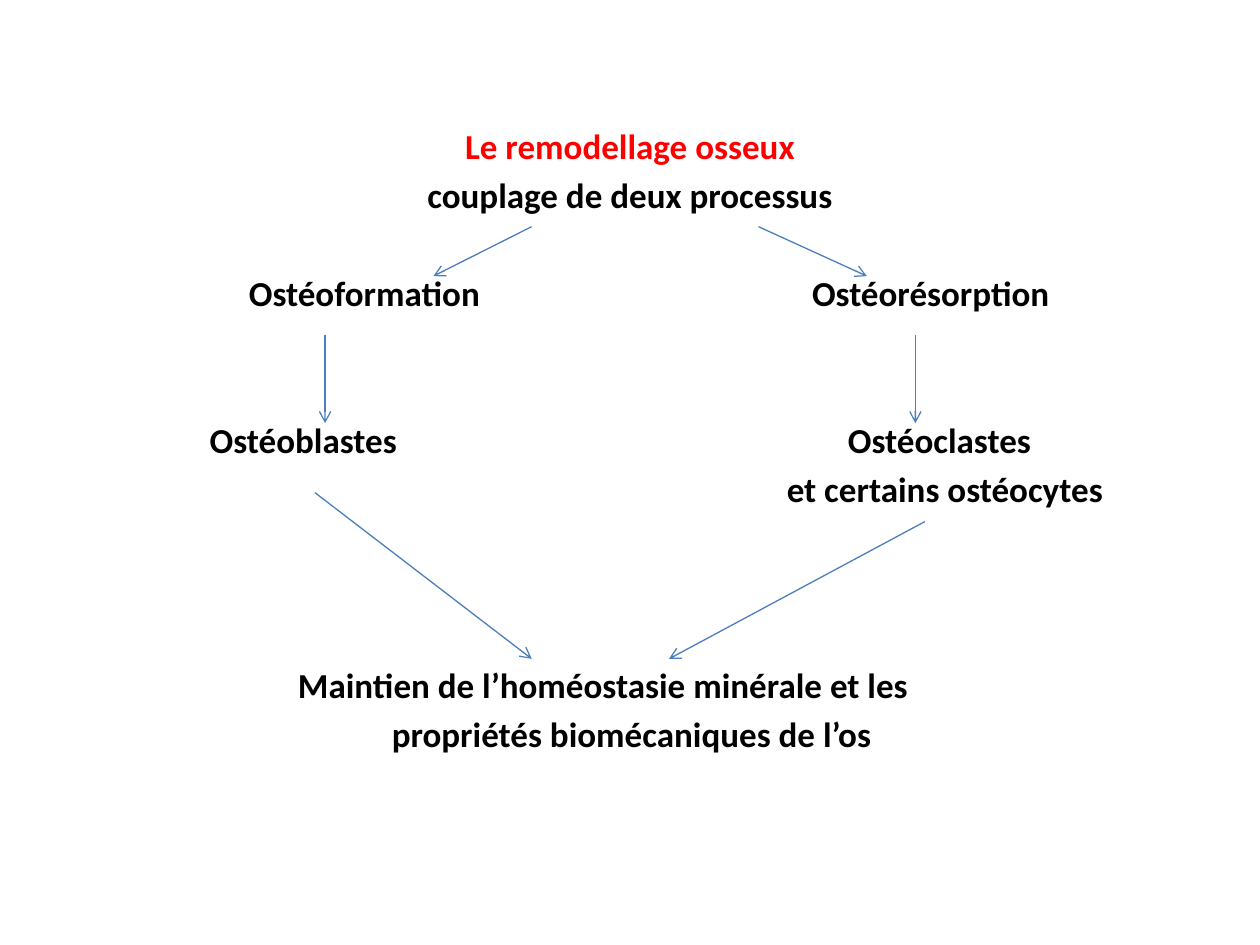
import dataclasses
import pptx
import pptx.dml.color
import pptx.enum.shapes
import pptx.enum.text
import pptx.util
import lxml.etree
import pptx.oxml.ns

RED = pptx.dml.color.RGBColor(0xFF, 0x00, 0x00)
BLACK = pptx.dml.color.RGBColor(0x00, 0x00, 0x00)
BLUE = pptx.dml.color.RGBColor(0x4B, 0x7E, 0xBC)
COLUMNS = 100
ROWS = 13
ROW_HEIGHT = pptx.util.Pt(28)
CENTER = pptx.enum.text.PP_ALIGN.CENTER
LEFT = pptx.enum.text.PP_ALIGN.LEFT


@dataclasses.dataclass
class Box:
    left: int
    top: int
    width: int
    height: int

    def across(self, columns):
        return round(self.width * columns / COLUMNS)

    def down(self, rows):
        return round(self.height * rows / ROWS)

    def point(self, column, row):
        return self.left + self.across(column), self.top + self.down(row)


def add_label(page, box, text, column, row, width, align=LEFT, indents=(0, 0), colors=(BLACK, BLACK)):
    lines = text.split("\n")
    label = page.shapes.add_textbox(
        *box.point(column, row), box.across(width), box.down(len(lines)))
    frame = label.text_frame
    frame.word_wrap = True
    frame.margin_left = frame.margin_right = frame.margin_top = frame.margin_bottom = 0
    for index, line in enumerate(lines):
        para = frame.paragraphs[0] if index == 0 else frame.add_paragraph()
        para.alignment = align
        para.space_before = pptx.util.Pt(3.6 if index else 0)
        para._p.get_or_add_pPr().set("marL", str(box.across(indents[index])))
        span = para.add_run()
        span.text = line
        span.font.name = "Calibri"
        span.font.size = pptx.util.Pt(20)
        span.font.bold = True
        span.font.color.rgb = colors[index]


def add_arrow(page, box, start, end):
    arrow = page.shapes.add_connector(
        pptx.enum.shapes.MSO_CONNECTOR.STRAIGHT, *box.point(*start), *box.point(*end))
    arrow.line.color.rgb = BLUE
    arrow.line.width = pptx.util.Pt(0.75)
    outline = arrow.line._get_or_add_ln()
    lxml.etree.SubElement(outline, pptx.oxml.ns.qn("a:tailEnd"), type="arrow")
    lxml.etree.SubElement(arrow._element.spPr, pptx.oxml.ns.qn("a:effectLst"))


def add_labels(page, box):
    add_label(page, box, "Le remodellage osseux\ncouplage de deux processus",
              5, 0, 90, align=CENTER, colors=(RED, BLACK))
    add_label(page, box, "Ostéoformation", 19.75, 3, 25)
    add_label(page, box, "Ostéorésorption", 64.45, 3, 25)
    add_label(page, box, "Ostéoblastes", 16.65, 6, 25)
    add_label(page, box, "Ostéoclastes\net certains ostéocytes", 62.45, 6, 32, indents=(4.85, 0))
    add_label(page, box, "Maintien de l’homéostasie minérale et les\npropriétés biomécaniques de l’os",
              23.65, 11, 60, indents=(0, 7.45))


def add_arrows(page, box):
    for start, end in (
        ((42.2, 2.08), (34.4, 3.09)),
        ((60.2, 2.08), (68.8, 3.09)),
        ((25.8, 4.29), (25.8, 6.09)),
        ((72.65, 4.29), (72.65, 6.09)),
        ((25, 7.51), (42.2, 10.9)),
        ((73.4, 8.1), (53.1, 10.9)),
    ):
        add_arrow(page, box, start, end)


def main():
    deck = pptx.Presentation()
    deck.slide_width = pptx.util.Inches(10)
    deck.slide_height = pptx.util.Inches(7.5)
    page = deck.slides.add_slide(deck.slide_layouts[6])
    diagram = Box(0, pptx.util.Inches(0.99), deck.slide_width, ROW_HEIGHT * ROWS)
    add_labels(page, diagram)
    add_arrows(page, diagram)
    deck.save("out.pptx")


if __name__ == "__main__":
    main()
